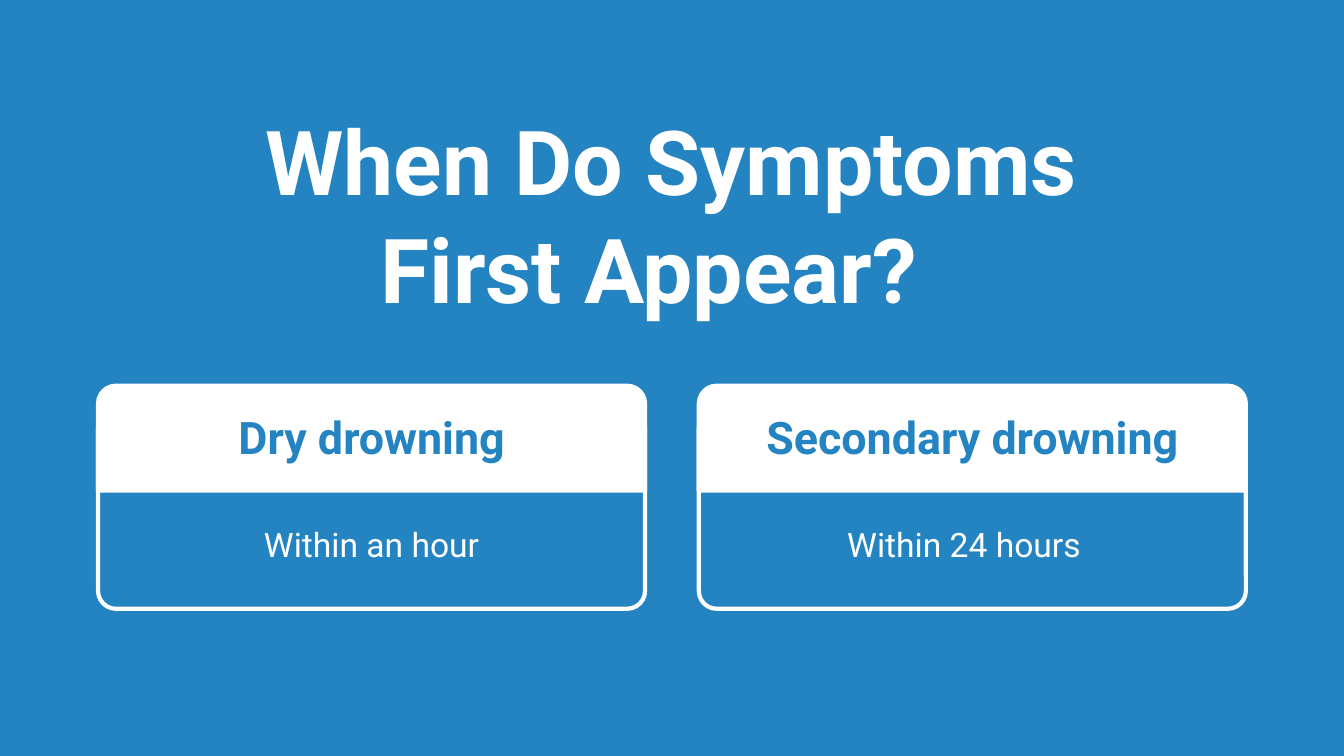
"""Build a slide on when drowning symptoms first appear."""
from pptx import Presentation
from pptx.dml.color import RGBColor
from pptx.enum.shapes import MSO_SHAPE
from pptx.enum.text import MSO_ANCHOR, PP_ALIGN
from pptx.util import Inches, Pt

HEADLINE = "When Do Symptoms First Appear?  "
CONDITIONS = [
    ("Dry drowning", "Within an hour"),
    ("Secondary drowning", "Within 24 hours  "),
]

THEME = {
    "font": "Roboto",
    "blue": RGBColor(0x24, 0x83, 0xC1),
    "white": RGBColor(0xFF, 0xFF, 0xFF),
    "headline": Pt(48),
    "condition": Pt(24),
    "onset": Pt(18),
    "border": Pt(2.25),
}

SLIDE_WIDTH = 10
SLIDE_HEIGHT = SLIDE_WIDTH * 9 / 16
CARD_WIDTH, CARD_GAP = 4.07, 0.4
LABEL_WIDTH, LABEL_HEIGHT = 3.28, 0.44
CARDS_LEFT = (SLIDE_WIDTH - len(CONDITIONS) * CARD_WIDTH - CARD_GAP) / 2


def add_label(slide, words, box, size, color, bold=False):
    label = slide.shapes.add_textbox(*map(Inches, box))
    frame = label.text_frame
    frame.text = words
    frame.word_wrap = True
    frame.vertical_anchor = MSO_ANCHOR.MIDDLE
    frame.margin_left = frame.margin_right = Inches(0.1)
    frame.margin_top = frame.margin_bottom = Inches(0.1)
    paragraph = frame.paragraphs[0]
    paragraph.alignment = PP_ALIGN.CENTER
    font = paragraph.runs[0].font
    font.name, font.size, font.bold = THEME["font"], size, bold
    font.color.rgb = color


def add_panel(slide, preset, box, corners, filled):
    panel = slide.shapes.add_shape(preset, *map(Inches, box))
    panel.shadow.inherit = False
    for index, corner in enumerate(corners):
        panel.adjustments[index] = corner
    if filled:
        panel.fill.solid()
        panel.fill.fore_color.rgb = THEME["white"]
    else:
        panel.fill.background()
    panel.line.color.rgb = THEME["white"]
    panel.line.width = THEME["border"]


def add_card(slide, left, condition, onset):
    label_left = left + (CARD_WIDTH - LABEL_WIDTH) / 2
    add_panel(slide, MSO_SHAPE.ROUNDED_RECTANGLE,
              (left, 3.05, CARD_WIDTH, 1.48), [0.09], False)
    add_panel(slide, MSO_SHAPE.ROUND_2_SAME_RECTANGLE,
              (left, 2.87, CARD_WIDTH, 0.78), [0.17, 0], True)
    add_label(slide, condition, (label_left, 3.03, LABEL_WIDTH, LABEL_HEIGHT),
              THEME["condition"], THEME["blue"], True)
    add_label(slide, onset, (label_left, 3.83, LABEL_WIDTH, LABEL_HEIGHT),
              THEME["onset"], THEME["white"])


def main():
    deck = Presentation()
    deck.slide_width, deck.slide_height = Inches(SLIDE_WIDTH), Inches(SLIDE_HEIGHT)
    slide = deck.slides.add_slide(deck.slide_layouts[6])
    slide.background.fill.solid()
    slide.background.fill.fore_color.rgb = THEME["blue"]
    add_label(slide, HEADLINE, (1.36, 0.57, 7.27, 2.04),
              THEME["headline"], THEME["white"], True)
    for column, (condition, onset) in enumerate(CONDITIONS):
        left = CARDS_LEFT + column * (CARD_WIDTH + CARD_GAP)
        add_card(slide, left, condition, onset)
    deck.save("out.pptx")


if __name__ == "__main__":
    main()
